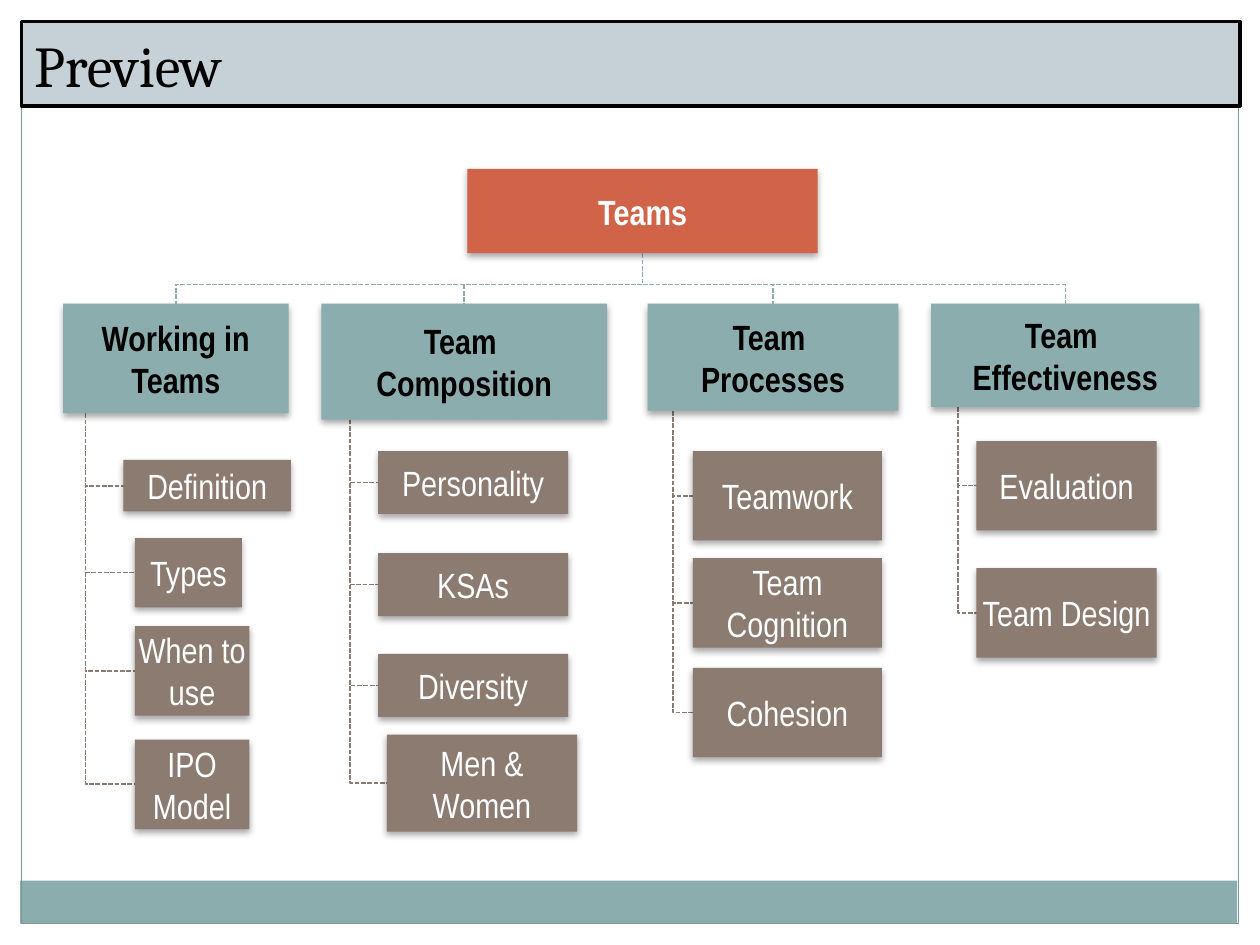
from lxml.etree import SubElement
from pptx import Presentation
from pptx.dml.color import RGBColor as RGB
from pptx.enum.dml import MSO_LINE as Dash
from pptx.enum.shapes import MSO_SHAPE as Shape
from pptx.enum.text import MSO_ANCHOR as Anchor, MSO_AUTO_SIZE as Fit, PP_ALIGN as Align
from pptx.oxml.ns import qn
from pptx.util import Inches, Pt

COLORS = {"teal": "8CADAE", "frame": "7C999A", "brown": "8C7B70", "orange": "D16349",
          "title": "C5D1D7", "white": "FFFFFF", "black": "000000"}
HUE = {name: RGB.from_string(code) for name, code in COLORS.items()}

# Each branch: heading, its box, then its topics with their boxes
BRANCHES = [
    ("Working in Teams", (0.5, 2.41, 1.79, 0.87), [
        ("Definition", (0.98, 3.65, 1.33, 0.41)),
        ("Types", (1.07, 4.27, 0.85, 0.55)),
        ("When to use", (1.07, 4.97, 0.91, 0.71)),
        ("IPO Model", (1.07, 5.87, 0.91, 0.71))]),
    ("Team \nComposition", (2.55, 2.41, 2.27, 0.92), [
        ("Personality", (3, 3.58, 1.51, 0.5)),
        ("KSAs", (3, 4.39, 1.51, 0.5)),
        ("Diversity", (3, 5.19, 1.51, 0.5)),
        ("Men & Women", (3.07, 5.83, 1.51, 0.77))]),
    ("Team \nProcesses", (5.14, 2.41, 1.99, 0.85), [
        ("Teamwork", (5.5, 3.58, 1.5, 0.71)),
        ("Team Cognition", (5.5, 4.43, 1.5, 0.71)),
        ("Cohesion", (5.5, 5.3, 1.5, 0.71))]),
    ("Team \nEffectiveness", (7.39, 2.41, 2.13, 0.82), [
        ("Evaluation", (7.75, 3.5, 1.43, 0.71)),
        ("Team Design", (7.75, 4.51, 1.43, 0.71))]),
]
ROOT = (3.71, 1.34, 2.78, 0.67)

deck = Presentation()
deck.slide_width, deck.slide_height = Inches(10), Inches(7.5)
slide = deck.slides.add_slide(deck.slide_layouts[5])
shapes = slide.shapes


def add_link(points, color):
    """Draw a dashed elbow line through points given in inches."""
    start, *rest = [(Inches(x), Inches(y)) for x, y in points]
    path = shapes.build_freeform(*start)
    path.add_line_segments(rest, close=False)
    link = path.convert_to_shape()
    link.shadow.inherit = False
    link.fill.background()
    link.line.color.rgb = HUE[color]
    link.line.width = Pt(0.9)
    link.line.dash_style = Dash.SQUARE_DOT


def add_box(text, place, fill, color, bold):
    """Add a filled box with centred text and a soft shadow below it."""
    box = shapes.add_shape(Shape.RECTANGLE, *map(Inches, place))
    box.fill.solid()
    box.fill.fore_color.rgb = HUE[fill]
    box.line.fill.background()
    box.shadow.inherit = False
    effects = box.element.spPr.find(qn("a:effectLst"))
    shadow = SubElement(effects, qn("a:outerShdw"), blurRad=str(Pt(4)), dist=str(Pt(2)),
                        dir="5400000", rotWithShape="0")
    tint = SubElement(shadow, qn("a:srgbClr"), val=COLORS["black"])
    SubElement(tint, qn("a:alpha"), val="35000")
    frame = box.text_frame
    frame.word_wrap = True
    frame.vertical_anchor = Anchor.MIDDLE
    frame.margin_left = frame.margin_right = Inches(0.01)
    frame.margin_top = frame.margin_bottom = Inches(0.01)
    frame.text = text
    for para in frame.paragraphs:
        para.alignment = Align.CENTER
        font = para.runs[0].font
        font.name, font.size, font.bold = "Arial Narrow", Pt(20), bold
        font.color.rgb = HUE[color]


# Page frame and bottom band
band = shapes.add_shape(Shape.RECTANGLE, Inches(0.16), Inches(6.99), Inches(9.66), Inches(0.34))
band.shadow.inherit = False
band.fill.solid()
band.fill.fore_color.rgb = HUE["teal"]
band.line.fill.background()
border = shapes.add_shape(Shape.RECTANGLE, Inches(0.17), Inches(0.17), Inches(9.66), Inches(7.16))
border.shadow.inherit = False
border.fill.background()
border.line.color.rgb = HUE["frame"]
border.line.width = Pt(0.75)

# Links lie behind the boxes
hub = ROOT[0] + ROOT[2] / 2
base = ROOT[1] + ROOT[3]
for head, (left, top, width, height), topics in BRANCHES:
    mid = left + width / 2
    add_link([(hub, base), (hub, 2.26), (mid, 2.26), (mid, top)], "teal")
    stem = left + width / 10
    for name, (x, y, w, h) in topics:
        add_link([(stem, top + height), (stem, y + h / 2), (x, y + h / 2)], "brown")

add_box("Teams", ROOT, "orange", "white", True)
for head, place, topics in BRANCHES:
    add_box(head, place, "teal", "black", True)
    for name, spot in topics:
        add_box(name, spot, "brown", "white", False)

# Title bar, in front of the page frame
title = shapes.title
title.left, title.top = Inches(0.17), Inches(0.17)
title.width, title.height = Inches(9.67), Inches(0.67)
title.fill.solid()
title.fill.fore_color.rgb = HUE["title"]
title.line.color.rgb = HUE["black"]
title.line.width = Pt(2)
frame = title.text_frame
frame.text = "Preview"
frame.auto_size = Fit.NONE
frame.vertical_anchor = Anchor.BOTTOM
para = frame.paragraphs[0]
para.alignment = Align.LEFT
font = para.runs[0].font
font.name, font.size = "Cambria", Pt(33)
font.color.rgb = HUE["black"]
title.element.getparent().append(title.element)

deck.save("out.pptx")
